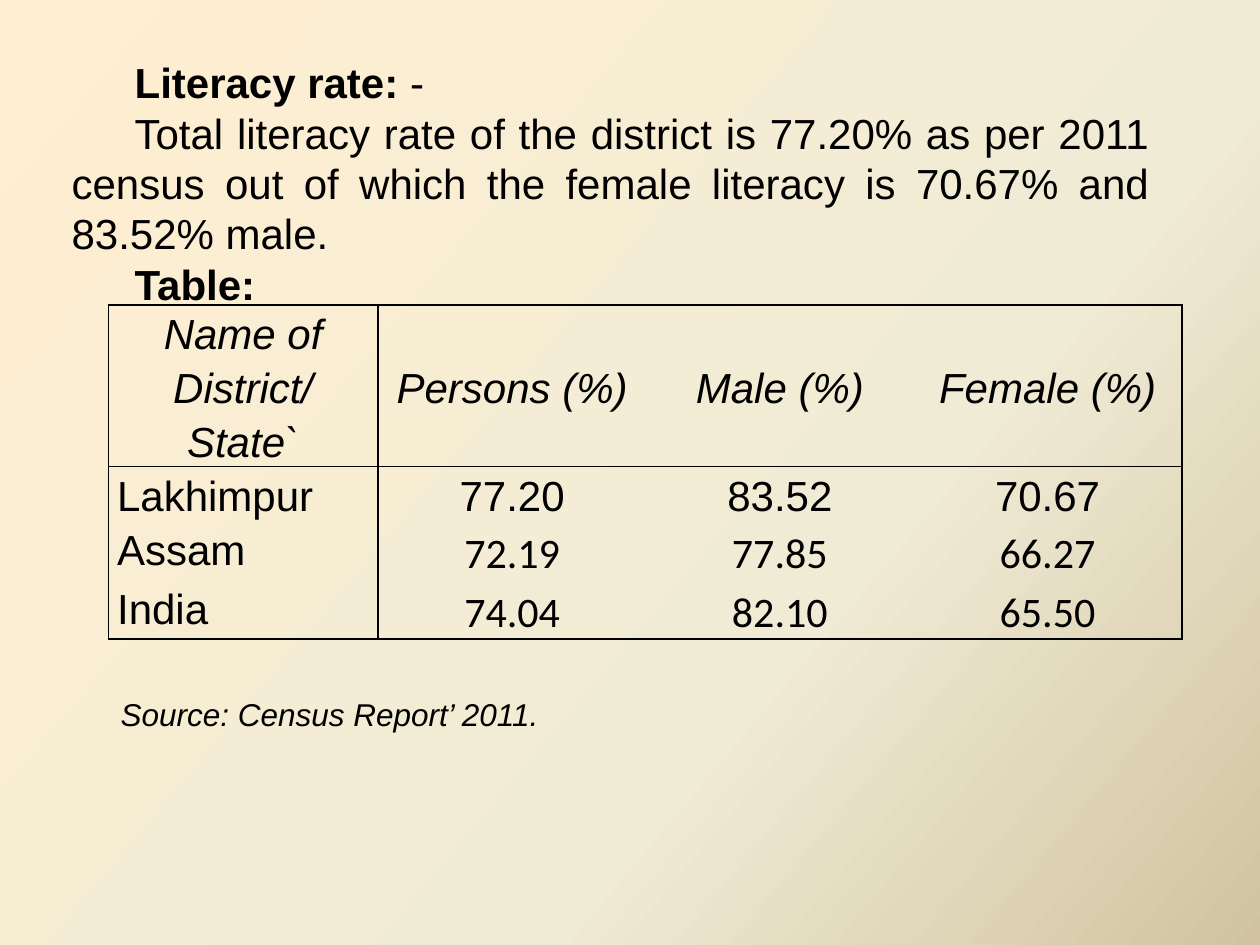
from copy import deepcopy
from dataclasses import dataclass

from lxml import etree
from pptx import Presentation
from pptx.dml.color import RGBColor
from pptx.enum.text import MSO_ANCHOR, MSO_AUTO_SIZE, PP_ALIGN
from pptx.oxml.ns import qn
from pptx.util import Inches, Pt

LEFT, CENTER, JUST = PP_ALIGN.LEFT, PP_ALIGN.CENTER, PP_ALIGN.JUSTIFY
TOP, MIDDLE = MSO_ANCHOR.TOP, MSO_ANCHOR.MIDDLE
FIT = MSO_AUTO_SIZE.SHAPE_TO_FIT_TEXT


@dataclass(frozen=True)
class Theme:
    ink: str = "000000"
    stops: tuple = ((0, "FFEFD1"), (0.65, "F0EBD5"), (1, "D1C39F"))
    angle: int = 40
    font: str = "Arial"
    digits: str = "Calibri"
    text: int = 24
    note: int = 18
    thin: float = 1
    thick: float = 1.5


THEME = Theme()

INTRO = (
    (LEFT, (("Literacy rate: ", True), ("-", False))),
    (JUST, (("Total literacy rate of the district is 77.20% as per 2011 census "
             "out of which the female literacy is 70.67% and 83.52% male.", False),)),
    (LEFT, (("Table:", True),)),
)
ROWS = (
    ("Name of District/ State`", "Persons (%)", "Male (%)", "Female (%)"),
    ("Lakhimpur", "77.20", "83.52", "70.67"),
    ("Assam", "72.19", "77.85", "66.27"),
    ("India", "74.04", "82.10", "65.50"),
)
WIDTHS = (2.14, 2.13, 2.12, 2.13)
HEIGHTS = (1.28, 0.43, 0.47, 0.47)


def paint_back(slide):
    """Fill the background with the three-stop gradient."""
    fill = slide.background.fill
    fill.gradient()
    fill.gradient_angle = 360 - THEME.angle
    stops = slide.element.find(".//" + qn("a:gsLst"))
    stops.append(deepcopy(stops[-1]))
    for stop, (place, color) in zip(fill.gradient_stops, THEME.stops):
        stop.position = place
        stop.color.rgb = RGBColor.from_string(color)


def add_run(para, text, **style):
    run = para.add_run()
    run.text = text
    values = {"name": THEME.font, "size": Pt(THEME.text), **style}
    for key, value in values.items():
        setattr(run.font, key, value)
    run.font.color.rgb = RGBColor.from_string(THEME.ink)


def add_box(slide, left, top, width, height, wrap, anchor):
    box = slide.shapes.add_textbox(*map(Inches, (left, top, width, height)))
    frame = box.text_frame
    values = {"word_wrap": wrap, "vertical_anchor": anchor, "auto_size": FIT}
    for key, value in values.items():
        setattr(frame, key, value)
    return frame


def add_intro(slide):
    frame = add_box(slide, 0.47, 0.39, 8.75, 2.12, True, MIDDLE)
    for i, (align, runs) in enumerate(INTRO):
        para = frame.add_paragraph() if i else frame.paragraphs[0]
        para.alignment = align
        para._p.get_or_add_pPr().set("indent", str(Inches(0.5)))
        for text, bold in runs:
            add_run(para, text, bold=bold)


def set_edges(cell, row, col):
    """Rule the outer frame, the header line and the first column's line."""
    last_row, last_col = len(ROWS) - 1, len(WIDTHS) - 1
    edges = {
        "L": THEME.thin if col <= 1 else 0,
        "R": THEME.thin if col in (0, last_col) else 0,
        "T": (THEME.thick, THEME.thin, 0, 0)[row],
        "B": {0: THEME.thin, last_row: THEME.thick}.get(row, 0),
    }
    props = cell._tc.get_or_add_tcPr()
    for side, width in edges.items():
        line = etree.SubElement(props, qn("a:ln" + side), w=str(Pt(width)))
        if width:
            solid = etree.SubElement(line, qn("a:solidFill"))
            etree.SubElement(solid, qn("a:srgbClr"), val=THEME.ink)
        else:
            etree.SubElement(line, qn("a:noFill"))


def fill_cell(cell, text, row, col):
    set_edges(cell, row, col)
    cell.fill.background()
    values = {
        "margin_left": Inches(0.07), "margin_right": Inches(0.07),
        "margin_top": 0, "margin_bottom": 0,
        "vertical_anchor": MIDDLE if row == 0 and col else TOP,
    }
    for key, value in values.items():
        setattr(cell, key, value)
    para = cell.text_frame.paragraphs[0]
    para.alignment = JUST if row and col == 0 else CENTER
    para.line_spacing = 1.15
    font = THEME.digits if row > 1 and col else THEME.font
    add_run(para, text, name=font, italic=row == 0)


def add_rates(slide):
    size = (0.86, 2.42, sum(WIDTHS), sum(HEIGHTS))
    table = slide.shapes.add_table(len(ROWS), len(WIDTHS), *map(Inches, size)).table
    table.first_row = table.horz_banding = False
    for column, width in zip(table.columns, WIDTHS):
        column.width = Inches(width)
    for row, height in zip(table.rows, HEIGHTS):
        row.height = Inches(height)
    for r, texts in enumerate(ROWS):
        for c, text in enumerate(texts):
            fill_cell(table.cell(r, c), text, r, c)


def add_source(slide):
    frame = add_box(slide, 0.86, 5.47, 3.55, 0.4, False, TOP)
    add_run(frame.paragraphs[0], "Source: Census Report’ 2011.",
            size=Pt(THEME.note), italic=True)


def main():
    deck = Presentation()
    deck.slide_width, deck.slide_height = Inches(10), Inches(7.5)
    slide = deck.slides.add_slide(deck.slide_layouts[6])
    paint_back(slide)
    add_rates(slide)
    add_intro(slide)
    add_source(slide)
    deck.save("out.pptx")


if __name__ == "__main__":
    main()
